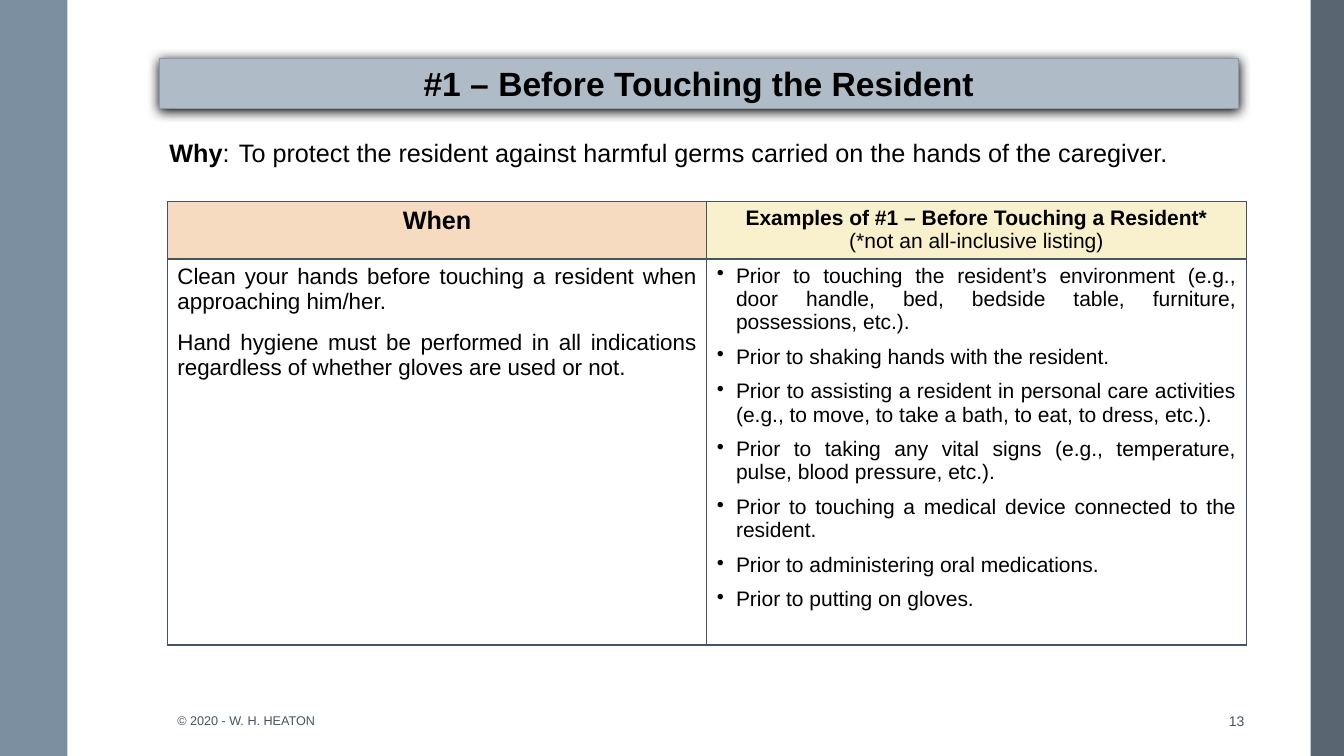
from dataclasses import dataclass

from lxml import etree
from pptx import Presentation
from pptx.dml.color import RGBColor
from pptx.enum.shapes import MSO_SHAPE
from pptx.enum.text import MSO_ANCHOR, MSO_AUTO_SIZE, PP_ALIGN
from pptx.oxml import parse_xml
from pptx.util import Inches, Pt

RECTANGLE = MSO_SHAPE.RECTANGLE
BOTTOM, MIDDLE = MSO_ANCHOR.BOTTOM, MSO_ANCHOR.MIDDLE
NO_AUTOFIT = MSO_AUTO_SIZE.NONE
LEFT, CENTER, RIGHT, JUSTIFY = (
    PP_ALIGN.LEFT, PP_ALIGN.CENTER, PP_ALIGN.RIGHT, PP_ALIGN.JUSTIFY)
DRAWING_NS = "http://schemas.openxmlformats.org/drawingml/2006/main"


@dataclass(frozen=True)
class Theme:
    font: str = "Arial"
    text: str = "000000"
    muted: str = "465562"
    paper: str = "FFFFFF"
    left_band: str = "7C8FA0"
    right_band: str = "596672"
    title_fill: str = "AFBBC6"
    title_line: str = "879AAA"
    when_fill: str = "F6DBC1"
    examples_fill: str = "F9F1CE"
    title_size: float = 24
    lead_size: float = 18
    when_size: float = 16
    examples_size: float = 15
    number_size: float = 10
    footer_size: float = 9


THEME = Theme()


def write(frame, paragraphs, size, align, color=THEME.text, gap=0, hanging=0, bullet=None):
    """Fill a text frame; each paragraph is a list of (text, bold) runs."""
    for index, runs in enumerate(paragraphs):
        paragraph = frame.paragraphs[0] if index == 0 else frame.add_paragraph()
        paragraph.alignment = align
        paragraph.space_before = paragraph.space_after = Pt(gap)
        properties = paragraph._p.get_or_add_pPr()
        if hanging:
            properties.set("marL", str(Inches(hanging)))
            properties.set("indent", str(-Inches(hanging)))
        if bullet:
            etree.SubElement(properties, f"{{{DRAWING_NS}}}buChar", char=bullet)
        for text, bold in runs:
            run = paragraph.add_run()
            run.text = text
            font = run.font
            for name, value in {"name": THEME.font, "size": Pt(size), "bold": bold}.items():
                setattr(font, name, value)
            font.color.rgb = RGBColor.from_string(color)


def style_cell(cell, fill, border):
    """Give a cell its fill and the same border on all four sides."""
    cell.fill.solid()
    cell.fill.fore_color.rgb = RGBColor.from_string(fill)
    for index, side in enumerate("LRTB"):
        cell._tc.get_or_add_tcPr().insert(index, parse_xml(
            f'<a:ln{side} xmlns:a="{DRAWING_NS}" w="{Pt(1)}"><a:solidFill>'
            f'<a:srgbClr val="{border}"/></a:solidFill></a:ln{side}>'))


prs = Presentation()
prs.slide_width, prs.slide_height = Inches(13.33), Inches(7.5)
slide = prs.slides.add_slide(prs.slide_layouts[5])

# Side bands
for left, width, color in ((13, 0.33, THEME.right_band), (0, 0.67, THEME.left_band)):
    band = slide.shapes.add_shape(RECTANGLE, Inches(left), 0, Inches(width), prs.slide_height)
    band.shadow.inherit = False
    band.fill.solid()
    band.fill.fore_color.rgb = RGBColor.from_string(color)
    band.line.fill.background()

# Title
title = slide.shapes.title
title.left, title.top, title.width, title.height = map(Inches, (1.58, 0.58, 10.7, 0.5))
title.fill.solid()
title.fill.fore_color.rgb = RGBColor.from_string(THEME.title_fill)
title.line.color.rgb = RGBColor.from_string(THEME.title_line)
title.line.width = Pt(0.75)
title._element.spPr.append(parse_xml(
    f'<a:effectLst xmlns:a="{DRAWING_NS}"><a:outerShdw blurRad="{Pt(8.5)}" '
    f'dist="{Pt(1)}" dir="5400000" algn="ctr" rotWithShape="0">'
    f'<a:srgbClr val="000000"/></a:outerShdw></a:effectLst>'))
title.text_frame.auto_size = NO_AUTOFIT
title.text_frame.vertical_anchor = BOTTOM
write(title.text_frame, [[("#1 – Before Touching the Resident", True)]],
      THEME.title_size, CENTER)
title.text_frame.paragraphs[0].line_spacing = 0.9

# Reason
reason = slide.shapes.add_table(
    1, 1, Inches(1.58), Inches(1.34), Inches(10.7), Inches(0.41)).table
reason.first_row = reason.horz_banding = False
style_cell(reason.cell(0, 0), THEME.paper, THEME.paper)
write(reason.cell(0, 0).text_frame, [[
    ("Why", True),
    (": \tTo protect the resident against harmful germs carried on the hands of the caregiver.",
     False),
]], THEME.lead_size, JUSTIFY, hanging=0.69)

# When and examples
when_rules = [
    "Clean your hands before touching a resident when approaching him/her.",
    "Hand hygiene must be performed in all indications regardless of whether gloves "
    "are used or not.",
]
examples = [
    "Prior to touching the resident’s environment (e.g., door handle, bed, bedside table, "
    "furniture, possessions, etc.).",
    "Prior to shaking hands with the resident.",
    "Prior to assisting a resident in personal care activities (e.g., to move, to take a bath, "
    "to eat, to dress, etc.).",
    "Prior to taking any vital signs (e.g., temperature, pulse, blood pressure, etc.).",
    "Prior to touching a medical device connected to the resident.",
    "Prior to administering oral medications.",
    "Prior to putting on gloves.",
]
guidance = slide.shapes.add_table(
    2, 2, Inches(1.66), Inches(2), Inches(10.7), Inches(4.4)).table
guidance.first_row = guidance.horz_banding = False
for row, height in zip(guidance.rows, (0.57, 3.83)):
    row.height = Inches(height)
fills = (THEME.when_fill, THEME.examples_fill, THEME.paper, THEME.paper)
for cell, fill in zip(guidance.iter_cells(), fills):
    style_cell(cell, fill, THEME.muted)

write(guidance.cell(0, 0).text_frame, [[("When", True)]], THEME.lead_size, CENTER)
write(guidance.cell(0, 1).text_frame, [
    [("Examples of #1 – Before Touching a Resident*", True)],
    [("(*not an all-inclusive listing)", False)],
], THEME.examples_size, CENTER)
write(guidance.cell(1, 0).text_frame, [[(rule, False)] for rule in when_rules],
      THEME.when_size, JUSTIFY, gap=6)
write(guidance.cell(1, 1).text_frame, [[(example, False)] for example in examples],
      THEME.examples_size, JUSTIFY, gap=4, hanging=0.19, bullet="•")

# Footer
for text, left, width, size, align in (
    ("© 2020 - W. H. HEATON", 1.66, 4.35, THEME.footer_size, LEFT),
    ("13", 11.77, 0.67, THEME.number_size, RIGHT),
):
    footer = slide.shapes.add_textbox(
        Inches(left), Inches(6.95), Inches(width), Inches(0.4)).text_frame
    footer.word_wrap = True
    footer.vertical_anchor = MIDDLE
    write(footer, [[(text, False)]], size, align, THEME.muted)

prs.save("out.pptx")
